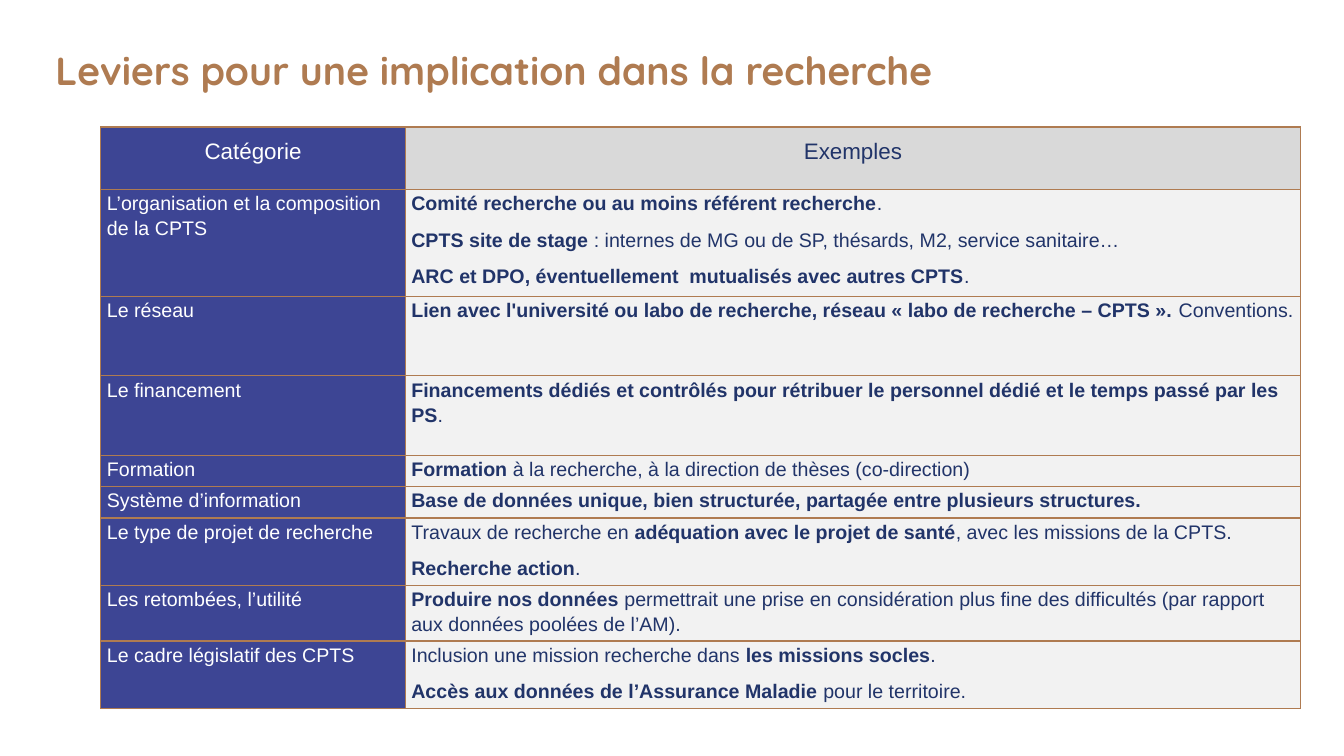
from lxml.etree import SubElement
from pptx import Presentation
from pptx.dml.color import RGBColor
from pptx.enum.text import PP_ALIGN
from pptx.oxml.ns import qn
from pptx.util import Inches, Pt

BROWN = RGBColor(0xAF, 0x7B, 0x51)
BLUE = RGBColor(0x3D, 0x45, 0x94)
NAVY = RGBColor(0x21, 0x34, 0x69)
GREY = RGBColor(0xD9, 0xD9, 0xD9)
PALE = RGBColor(0xF2, 0xF2, 0xF2)
WHITE = RGBColor(0xFF, 0xFF, 0xFF)

COLUMN_WIDTHS = [3.02, 8.88]
HEADER_HEIGHT = 0.62
HEADERS = ["Catégorie", "Exemples"]
LEVERS = [
    (1.06, "L’organisation et la composition de la CPTS", [
        "**Comité recherche ou au moins référent recherche**.",
        "**CPTS site de stage **: internes de MG ou de SP, thésards, M2, service sanitaire…",
        "**ARC et DPO, éventuellement  mutualisés avec autres CPTS**."]),
    (0.79, "Le réseau", [
        "**Lien avec l'université ou labo de recherche, réseau « labo de recherche – CPTS ». **Conventions."]),
    (0.79, "Le financement", [
        "**Financements dédiés et contrôlés pour rétribuer le personnel dédié "
        "et le temps passé par les PS**."]),
    (0.31, "Formation", [
        "**Formation** à la recherche, à la direction de thèses (co-direction)"]),
    (0.31, "Système d’information", [
        "**Base de données unique, bien structurée, partagée entre plusieurs structures.**"]),
    (0.67, "Le type de projet de recherche", [
        "Travaux de recherche en **adéquation avec le projet de santé**, avec les missions de la CPTS.",
        "**Recherche action**."]),
    (0.55, "Les retombées, l’utilité", [
        "**Produire nos données **permettrait une prise en considération plus fine "
        "des difficultés (par rapport aux données poolées de l’AM)."]),
    (0.67, "Le cadre législatif des CPTS", [
        "Inclusion une mission recherche dans **les missions socles**.",
        "**Accès aux données de l’Assurance Maladie **pour le territoire."]),
]


def write_text(tf, paragraphs, size=14, color=NAVY, font="Arial",
               align=PP_ALIGN.LEFT, spacing=1.15, after=8):
    for i, text in enumerate(paragraphs):
        p = tf.add_paragraph() if i else tf.paragraphs[0]
        p.alignment = align
        p.line_spacing = spacing
        p.space_after = Pt(after)
        for j, part in enumerate(text.split("**")):
            if part:
                r = p.add_run()
                r.text = part
                r.font.name = font
                r.font.size = Pt(size)
                r.font.bold = j % 2 == 1
                r.font.color.rgb = color


def fill_cell(cell, paragraphs, fill, **text_format):
    cell.margin_left = cell.margin_right = Inches(0.06)
    cell.margin_top = cell.margin_bottom = 0
    tcPr = cell._tc.get_or_add_tcPr()
    for side in ("lnL", "lnR", "lnT", "lnB"):
        ln = SubElement(tcPr, qn(f"a:{side}"), w=str(Pt(1)))
        SubElement(SubElement(ln, qn("a:solidFill")), qn("a:srgbClr"), val=str(BROWN))
    cell.fill.solid()
    cell.fill.fore_color.rgb = fill
    write_text(cell.text_frame, paragraphs, **text_format)


def add_title(slide, left, top, width, height):
    sp = slide.shapes.add_textbox(Inches(left), Inches(top), Inches(width), Inches(height))
    tf = sp.text_frame
    tf.word_wrap = True
    tf.margin_left = tf.margin_right = tf.margin_top = tf.margin_bottom = Inches(0.1)
    write_text(tf, ["**Leviers pour une implication dans la recherche**"],
               size=28, color=BROWN, font="Quicksand", spacing=1.0, after=0)


def add_levers_table(slide, left, top, width, height):
    table = slide.shapes.add_table(len(LEVERS) + 1, len(HEADERS), Inches(left), Inches(top),
                                   Inches(width), Inches(height)).table
    table.horz_banding = False
    for column, share in zip(table.columns, COLUMN_WIDTHS):
        column.width = Inches(width * share / sum(COLUMN_WIDTHS))
    heights = [HEADER_HEIGHT] + [lever[0] for lever in LEVERS]
    for row, row_height in zip(table.rows, heights):
        row.height = Inches(height * row_height / sum(heights))
    for i, (header, fill, color) in enumerate(zip(HEADERS, (BLUE, GREY), (WHITE, NAVY))):
        fill_cell(table.cell(0, i), [header], fill, size=16, color=color,
                  align=PP_ALIGN.CENTER, spacing=1.5, after=0)
    for i, (_, category, examples) in enumerate(LEVERS, start=1):
        fill_cell(table.cell(i, 0), [category], BLUE, color=WHITE)
        fill_cell(table.cell(i, 1), examples, PALE)


def main():
    prs = Presentation()
    prs.slide_width, prs.slide_height = Inches(13.33), Inches(7.5)
    slide = prs.slides.add_slide(prs.slide_layouts[6])
    add_title(slide, 0.45, 0.36, 12.42, 0.84)
    add_levers_table(slide, 1, 1.26, 11.9, 5.77)
    prs.save("out.pptx")


if __name__ == "__main__":
    main()
